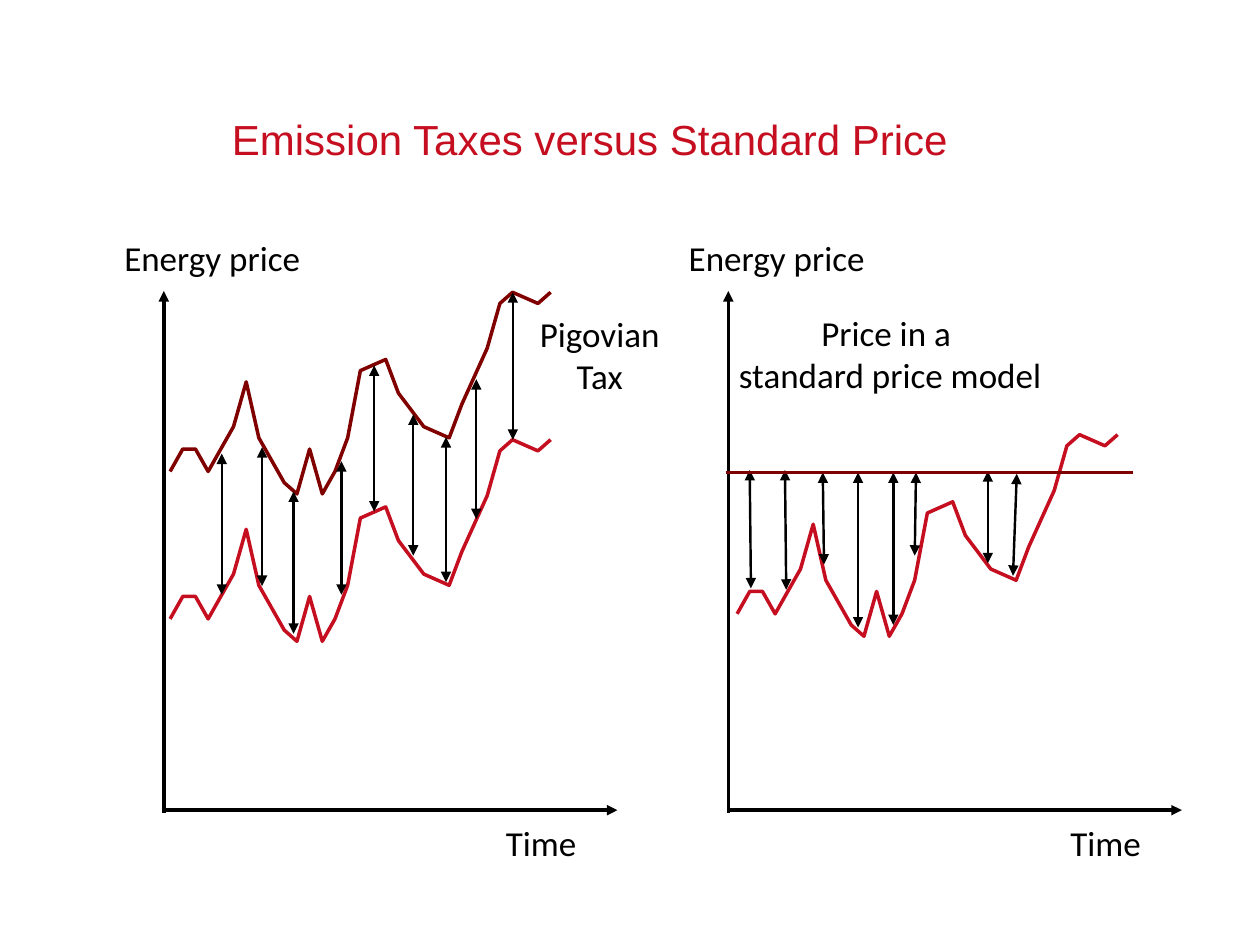
from lxml import etree
from pptx import Presentation
from pptx.dml.color import RGBColor
from pptx.enum.shapes import MSO_CONNECTOR
from pptx.enum.text import MSO_ANCHOR, MSO_AUTO_SIZE, PP_ALIGN
from pptx.oxml.ns import qn
from pptx.util import Inches, Pt

STRAIGHT = MSO_CONNECTOR.STRAIGHT
BOTTOM, TOP = MSO_ANCHOR.BOTTOM, MSO_ANCHOR.TOP
LEFT, CENTER = PP_ALIGN.LEFT, PP_ALIGN.CENTER
FIT, NO_FIT = MSO_AUTO_SIZE.SHAPE_TO_FIT_TEXT, MSO_AUTO_SIZE.NONE

THEME = {
    "red": "C50E1F", "dark_red": "800000", "black": "000000",
    "title_font": "Arial", "label_font": "Calibri",
    "title_size": 24, "label_size": 20,
    "line": 2, "arrow": 1.38,
}

TITLE = "Emission Taxes versus Standard Price"

# Price path in grid steps: time to the right, distance below the peak
PRICE = [(0, 16), (1, 14), (2, 14), (3, 16), (4, 14), (5, 12), (6, 8), (7, 13),
         (9, 17), (10, 18), (11, 14), (12, 18), (13, 16), (14, 13), (15, 7),
         (17, 6), (18, 9), (20, 12), (22, 13), (23, 10), (25, 5), (26, 1),
         (27, 0), (29, 1), (30, 0)]
STEP_X, STEP_Y = Inches(3.02 / 30), Inches(1.6 / 18)

# Arrows are (x1, y1, x2, y2); curves are (left, top, colour)
CHARTS = [
    {
        "axis_x": 1.3,
        "curves": [(1.35, 3.49, "red"), (1.35, 2.32, "dark_red")],
        "levels": [],
        "arrows": [(1.76, 3.6, 1.76, 4.72), (2.08, 3.55, 2.08, 4.65),
                   (2.33, 3.9, 2.33, 5.03), (2.71, 3.66, 2.71, 4.72),
                   (2.97, 2.9, 2.97, 4.06), (3.28, 3.29, 3.28, 4.41),
                   (3.54, 3.47, 3.54, 4.62), (3.78, 3.01, 3.78, 4.12),
                   (4.07, 2.32, 4.07, 3.49)],
        "note": ("Pigovian\nTax", 4.28, 2.48, 0.96),
    },
    {
        "axis_x": 5.78,
        "curves": [(5.85, 3.45, "red")],
        "levels": [(5.76, 3.75, 8.99, 3.75)],
        "arrows": [(5.95, 3.73, 5.96, 4.67), (6.23, 3.73, 6.24, 4.68),
                   (6.53, 3.75, 6.54, 4.48), (6.81, 3.75, 6.81, 4.98),
                   (7.09, 3.75, 7.09, 4.96), (7.27, 3.75, 7.26, 4.41),
                   (7.84, 3.74, 7.84, 4.47), (8.07, 3.76, 8.04, 4.57)],
        "note": ("Price in a \vstandard price model", 5.85, 2.47, 2.43),
    },
]


def rgb(name):
    return RGBColor.from_string(THEME[name])


def write(shape, text, font="label_font", size="label_size", color="black",
          align=CENTER, anchor=TOP, wrap=False, fit=FIT, spacing=None):
    tf = shape.text_frame
    tf.text = text
    tf.margin_left = tf.margin_right = tf.margin_top = tf.margin_bottom = 0
    tf.word_wrap, tf.auto_size, tf.vertical_anchor = wrap, fit, anchor
    for p in tf.paragraphs:
        p.alignment = align
        if spacing:
            p.line_spacing = Pt(spacing)
        for r in p.runs:
            r.font.name, r.font.size = THEME[font], Pt(THEME[size])
            r.font.color.rgb = rgb(color)


def add_label(s, text, left, top, width, height=0.34):
    box = s.shapes.add_textbox(Inches(left), Inches(top), Inches(width), Inches(height))
    write(box, text)


def add_line(s, ends, color="black", width="line", heads=()):
    sp = s.shapes.add_connector(STRAIGHT, *[Inches(v) for v in ends])
    sp.line.color.rgb = rgb(color)
    sp.line.width = Pt(THEME[width])
    ln = sp.line._get_or_add_ln()
    for head in heads:
        etree.SubElement(ln, qn("a:" + head), type="triangle")
    etree.SubElement(ln.getparent(), qn("a:effectLst"))


def add_curve(s, left, top, color):
    builder = s.shapes.build_freeform(*PRICE[0], scale=(STEP_X, STEP_Y))
    builder.add_line_segments(PRICE[1:], close=False)
    sp = builder.convert_to_shape(Inches(left), Inches(top))
    sp.fill.background()
    sp.line.color.rgb = rgb(color)
    sp.line.width = Pt(THEME["line"])
    sp.shadow.inherit = False


def add_price_chart(s, chart):
    x = chart["axis_x"]
    add_line(s, (x, 6.43, x + 3.6, 6.43), heads=["tailEnd"])
    add_line(s, (x, 6.45, x, 2.31), heads=["tailEnd"])
    add_label(s, "Energy price", x - 0.32, 1.88, 1.41)
    add_label(s, "Time", x + 2.71, 6.52, 0.57)
    for curve in chart["curves"]:
        add_curve(s, *curve)
    for ends in chart["arrows"]:
        add_line(s, ends, width="arrow", heads=["headEnd", "tailEnd"])
    for ends in chart["levels"]:
        add_line(s, ends, color="dark_red")
    add_label(s, *chart["note"], height=0.67)


def main():
    prs = Presentation()
    prs.slide_width, prs.slide_height = Inches(10), Inches(7.5)
    s = prs.slides.add_slide(prs.slide_layouts[5])
    title = s.shapes.title
    title.left, title.top = Inches(1.84), Inches(0.33)
    title.width, title.height = Inches(7.57), Inches(0.97)
    write(title, TITLE, font="title_font", size="title_size", color="red",
          align=LEFT, anchor=BOTTOM, wrap=True, fit=NO_FIT, spacing=30)
    for chart in CHARTS:
        add_price_chart(s, chart)
    prs.save("out.pptx")


if __name__ == "__main__":
    main()
